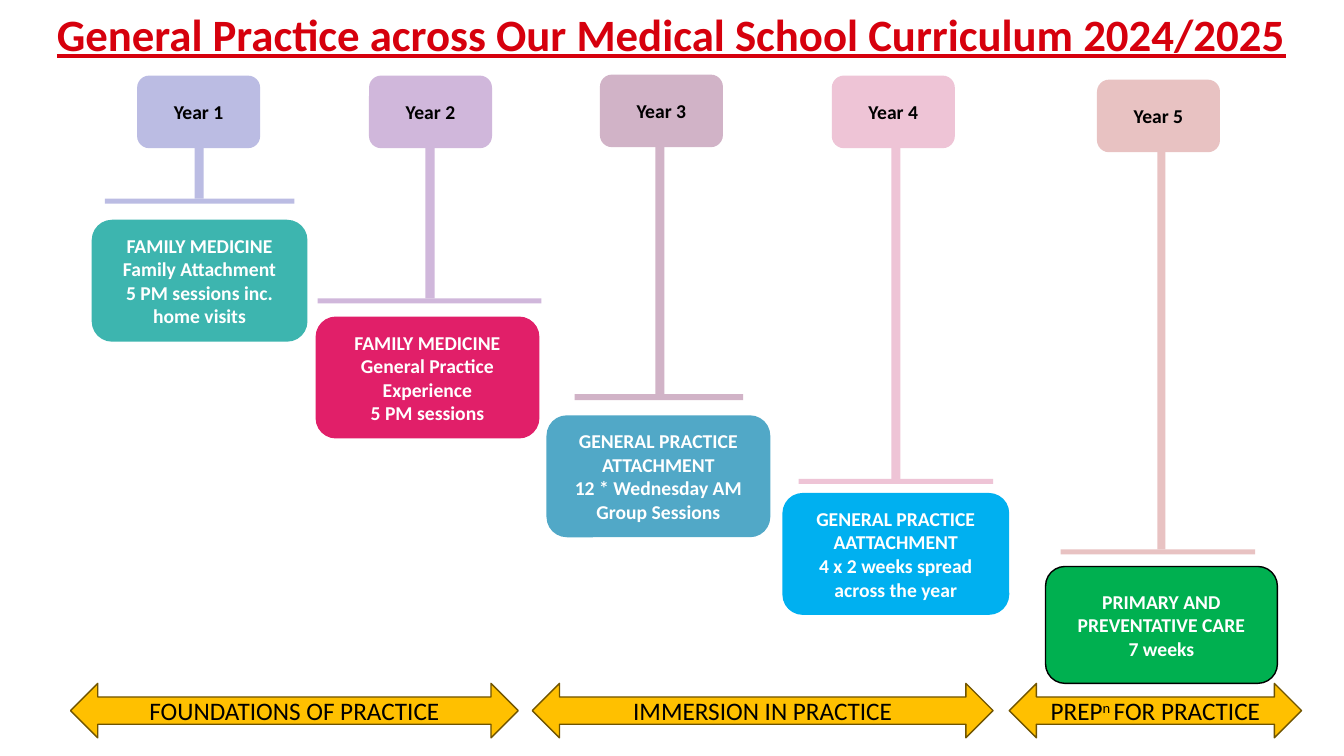
from pptx import Presentation
from pptx.dml.color import RGBColor
from pptx.enum.shapes import MSO_SHAPE
from pptx.enum.text import MSO_ANCHOR, PP_ALIGN

PX = 9144
COLOURS = {
    "title": "D6000D", "black": "000000", "white": "FFFFFF",
    "arrow": "FFC000", "arrow_line": "705400",
    "year_1": "BBBCE3", "year_2": "D0B7DB", "year_3": "D1B3C7",
    "year_4": "EEC4D6", "year_5": "E8C2C2",
    "teal": "3DB5AF", "pink": "E11F69", "steel": "51A8C7",
    "sky": "00B0F0", "green": "00B050",
}
YEARS = [
    dict(tab=(136, 75), stem=(193, 9), bar=(104, 197, 188, 5),
         card=(91, 218, 214, 121), fill="teal",
         text="FAMILY MEDICINE\nFamily Attachment\n5 PM sessions inc. home visits"),
    dict(tab=(366, 75), stem=(422, 9), bar=(315, 296, 222, 5),
         card=(313, 314, 222, 121), fill="pink",
         text="FAMILY MEDICINE\nGeneral Practice Experience\n5 PM sessions"),
    dict(tab=(595, 74), stem=(650, 9), bar=(570, 391, 167, 6),
         card=(542, 412, 222, 121), fill="steel",
         text="GENERAL PRACTICE\nATTACHMENT\n12 * Wednesday AM Group Sessions"),
    dict(tab=(825, 75), stem=(884, 9), bar=(792, 475, 193, 5),
         card=(776, 489, 225, 121), fill="sky",
         text="GENERAL PRACTICE\nAATTACHMENT\n4 x 2 weeks spread across the year"),
    dict(tab=(1088, 79), stem=(1148, 8), bar=(1052, 545, 193, 5),
         card=(1037, 562, 230, 116), fill="green", line="black",
         text="PRIMARY AND PREVENTATIVE CARE\n7 weeks"),
]
PHASES = [
    (70, 444, "FOUNDATIONS OF PRACTICE"),
    (528, 457, "IMMERSION IN PRACTICE"),
    (1001, 290, "PREP^n ^FOR PRACTICE"),
]
TAB_WIDTH, TAB_HEIGHT = 122, 72


def colour(name):
    return RGBColor.from_string(COLOURS[name])


def write(frame, text, size=14, color="white", bold=False, underline=False):
    frame.word_wrap = True
    for number, line in enumerate(text.split("\n")):
        para = frame.add_paragraph() if number else frame.paragraphs[0]
        para.alignment = PP_ALIGN.CENTER
        for part, words in enumerate(line.split("^")):
            span = para.add_run()
            span.text = words
            span.font.name = "Calibri"
            span.font.size = size * 12700
            span.font.bold = bold
            span.font.underline = underline
            span.font.color.rgb = colour(color)
            if part % 2:
                span._r.get_or_add_rPr().set("baseline", "30000")


class Canvas:
    def __init__(self, page):
        self.page = page

    def shape(self, kind, area, fill, line=None):
        box = self.page.shapes.add_shape(kind, *(side * PX for side in area))
        box.shadow.inherit = False
        box.fill.solid()
        box.fill.fore_color.rgb = colour(fill)
        if line:
            box.line.color.rgb = colour(line)
            box.line.width = 12700
        else:
            box.line.fill.background()
        return box

    def label(self, kind, area, text, fill, line=None, **style):
        box = self.shape(kind, area, fill, line)
        box.text_frame.vertical_anchor = MSO_ANCHOR.MIDDLE
        write(box.text_frame, text, **style)

    def title(self, area, text):
        box = self.page.shapes.add_textbox(*(side * PX for side in area))
        write(box.text_frame, text, size=32, color="title", bold=True, underline=True)

    def year(self, number, tab, stem, bar, card, fill, text, line=None):
        tint = f"year_{number}"
        stem_left, stem_width = stem
        stem_top = tab[1] + TAB_HEIGHT
        self.label(MSO_SHAPE.ROUNDED_RECTANGLE, card, text, fill, line, bold=True)
        self.label(MSO_SHAPE.ROUNDED_RECTANGLE, (*tab, TAB_WIDTH, TAB_HEIGHT),
                   f"Year {number}", tint, color="black", bold=True)
        self.shape(MSO_SHAPE.RECTANGLE, bar, tint)
        self.shape(MSO_SHAPE.RECTANGLE,
                   (stem_left, stem_top, stem_width, bar[1] - stem_top), tint)

    def phase(self, left, width, text):
        self.label(MSO_SHAPE.LEFT_RIGHT_ARROW, (left, 678, width, 54), text,
                   "arrow", "arrow_line", size=18, color="black")


def main():
    deck = Presentation()
    deck.slide_width, deck.slide_height = 1333 * PX, 750 * PX
    canvas = Canvas(deck.slides.add_slide(deck.slide_layouts[6]))
    canvas.title((16, 2, 1300, 64),
                 "General Practice across Our Medical School Curriculum 2024/2025")
    for number, year in enumerate(YEARS, 1):
        canvas.year(number, **year)
    for phase in PHASES:
        canvas.phase(*phase)
    deck.save("out.pptx")


if __name__ == "__main__":
    main()
